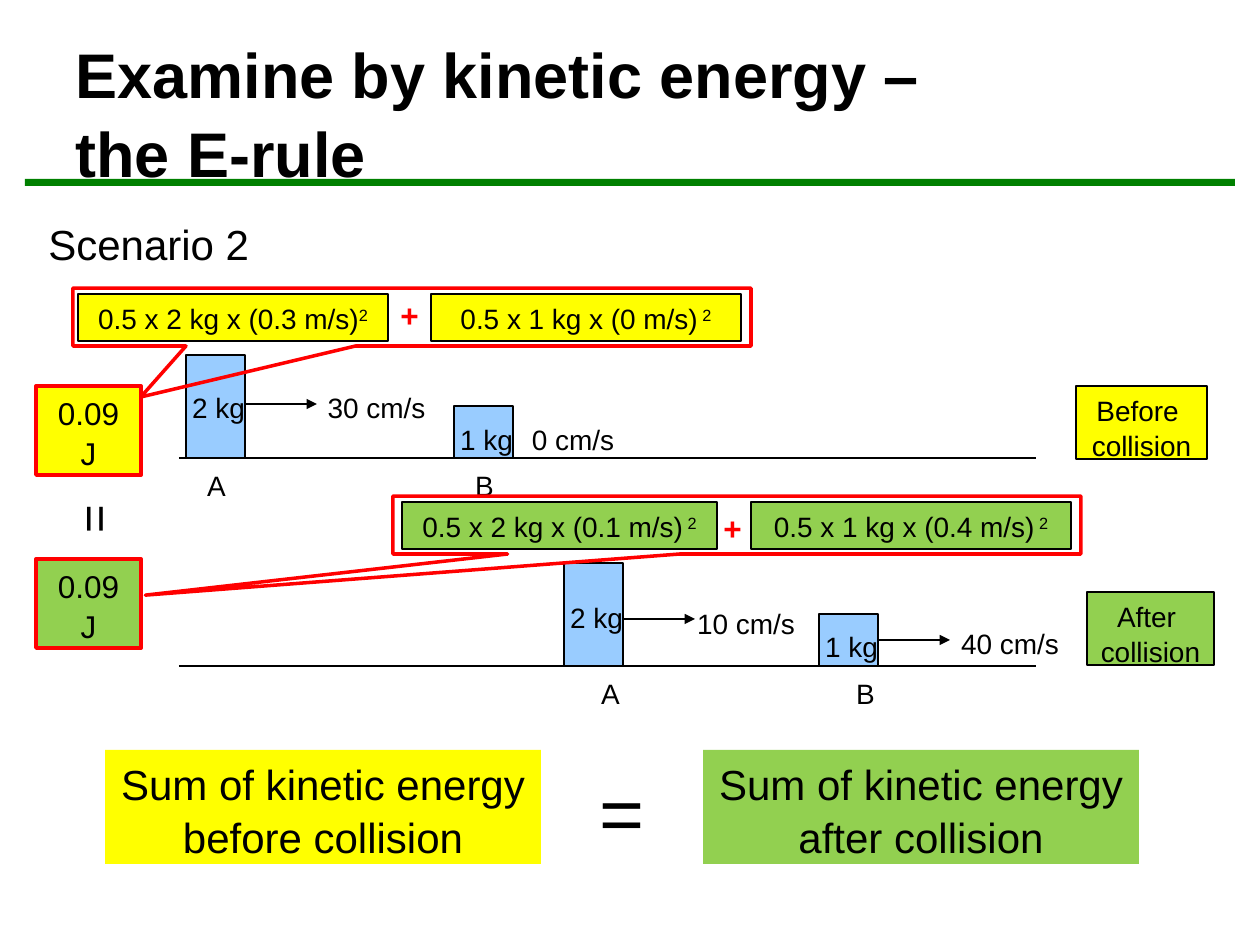
import pptx
import pptx.util
import pptx.dml.color
import pptx.enum.shapes
import pptx.enum.text
import pptx.oxml
import pptx.oxml.ns

PX = 914400 / 126
YELLOW, GREEN, BLUE, RED, BLACK = "FFFF00", "92D050", "99CCFF", "FF0000", "000000"
SHAPE = pptx.enum.shapes.MSO_SHAPE
ALIGN = pptx.enum.text.PP_ALIGN
ANCHOR = pptx.enum.text.MSO_ANCHOR


def emu(*lengths):
    return [pptx.util.Emu(round(v * PX)) for v in lengths]


def rgb(color):
    return pptx.dml.color.RGBColor.from_string(color)


def write(sp, text, size, color=BLACK, bold=False, align=ALIGN.CENTER, power="", wrap=True):
    tf = sp.text_frame
    tf.text = text
    tf.word_wrap = wrap
    tf.auto_size = pptx.enum.text.MSO_AUTO_SIZE.NONE
    tf.vertical_anchor = ANCHOR.TOP
    if power:
        r = tf.paragraphs[0].add_run()
        r.text = power
        r._r.get_or_add_rPr().set("baseline", "30000")
    for p in tf.paragraphs:
        p.alignment = align
        p.line_spacing = 1.05
        p.font.name = "Arial"
        p.font.size = pptx.util.Pt(size)
        p.font.bold = bold
        p.font.color.rgb = rgb(color)


def box(s, rect, fill=None, line=None, width=0.75, kind=SHAPE.RECTANGLE):
    sp = s.shapes.add_shape(kind, *emu(*rect))
    sp.shadow.inherit = False
    if fill:
        sp.fill.solid()
        sp.fill.fore_color.rgb = rgb(fill)
    else:
        sp.fill.background()
    if line:
        sp.line.color.rgb = rgb(line)
        sp.line.width = pptx.util.Pt(width)
    else:
        sp.line.fill.background()
    return sp


def label(s, rect, text, size=16, **style):
    sp = s.shapes.add_textbox(*emu(*rect))
    write(sp, text, size, **style)
    if style.get("align") != ALIGN.LEFT:
        sp.text_frame.margin_left = sp.text_frame.margin_right = 0
    return sp


def rule(s, x, y, length, arrow=False):
    cn = s.shapes.add_connector(pptx.enum.shapes.MSO_CONNECTOR.STRAIGHT, *emu(x, y, x + length, y))
    cn.line.color.rgb = rgb(BLACK)
    cn.line.width = pptx.util.Pt(0.75)
    if arrow:
        tail = pptx.oxml.ns.qn("a:tailEnd")
        cn.line._get_or_add_ln().append(cn._element.makeelement(tail, {"type": "triangle"}))
    effects = pptx.oxml.ns.qn("a:effectLst")
    cn._element.spPr.append(cn._element.makeelement(effects, {}))


def heading(s):
    box(s, (25, 179, 1210, 7), "008000")
    sp = s.shapes.title
    sp.left, sp.top, sp.width, sp.height = emu(63, 32, 1134, 158)
    write(sp, "Examine by kinetic energy – \vthe E-rule", 36, bold=True, align=ALIGN.LEFT)
    sp.text_frame.vertical_anchor = ANCHOR.MIDDLE
    label(s, (36, 210, 241, 58), "Scenario 2", 24, align=ALIGN.LEFT, wrap=False)


def state(s, rect, fill, callout, formulas, plus, blocks, name_dx, total_dy, tag):
    left, top, width, track = rect
    for name, mass, x, height, *_ in blocks:
        box(s, (x, top + track - height, 59, height), BLUE, BLACK)
    x, w, *adjust = callout
    sp = box(s, (x, top, w, 58), None, RED, 2, SHAPE.RECTANGULAR_CALLOUT)
    sp.adjustments[0], sp.adjustments[1] = adjust
    sp = box(s, (36, top + total_dy, 105, 89), fill, RED, 2.25)
    write(sp, "0.09 J", 18)
    for x, w, text, power in formulas:
        write(box(s, (x, top + 6, w, 47), fill, BLACK), text, 16, power=power)
    x, dy = plus
    label(s, (x, top + dy, 44, 50), "+", 18, color=RED, bold=True, align=ALIGN.LEFT, wrap=False)
    rule(s, left, top + track, width)
    for name, mass, x, height, mass_dy, arrow_dy, speed in blocks:
        label(s, (x - 7, top + mass_dy, 79, 34), mass)
        label(s, (x + name_dx, top + track + 3, 47, 50), name)
        if arrow_dy:
            rule(s, x + 60, top + arrow_dy, 71, True)
        speed_x, speed_dy, w, text = speed
        label(s, (speed_x, top + speed_dy, w, 44), text)
    x, dy, w, text = tag
    write(box(s, (x, top + dy, w, 73), fill, BLACK), text, 16)


def conclusion(s, rect):
    left, top, width, height = rect
    for x, fill, text in ((left, YELLOW, "before"), (left + width - 436, GREEN, "after")):
        write(box(s, (x, top, 436, height), fill), f"Sum of kinetic energy {text} collision", 24)
    label(s, (left + 486, top + 4, 63, 106), "=", 44)


def main():
    prs = pptx.Presentation()
    prs.slide_width, prs.slide_height = emu(1260, 945)
    s = prs.slides.add_slide(prs.slide_layouts[5])
    heading(s)
    state(s, (179, 288, 857, 170), YELLOW, (73, 678, -0.4, 1.38),
          [(78, 310, "0.5 x 2 kg x (0.3 m/s)", "2"), (431, 310, "0.5 x 1 kg x (0 m/s)", " 2")],
          (388, 0),
          [("A", "2 kg", 186, 103, 95, 116, (297, 95, 159, "30 cm/s")),
           ("B", "1 kg", 454, 52, 127, None, (517, 127, 112, "0 cm/s"))],
          7, 98, (1076, 98, 131, "Before \ncollision"))
    state(s, (179, 496, 857, 170), GREEN, (393, 688, -0.86, 1.21),
          [(402, 315, "0.5 x 2 kg x (0.1 m/s)", " 2"), (751, 320, "0.5 x 1 kg x (0.4 m/s)", " 2")],
          (711, 5),
          [("A", "2 kg", 564, 103, 97, 123, (675, 103, 142, "10 cm/s")),
           ("B", "1 kg", 819, 52, 126, 144, (929, 123, 162, "40 cm/s"))],
          23, 63, (1087, 96, 127, "After \ncollision"))
    sp = label(s, (62, 483, 54, 72), "=", 28, align=ALIGN.LEFT, wrap=False)
    sp.rotation = 270
    conclusion(s, (105, 750, 1034, 114))
    prs.save("out.pptx")


if __name__ == "__main__":
    main()
